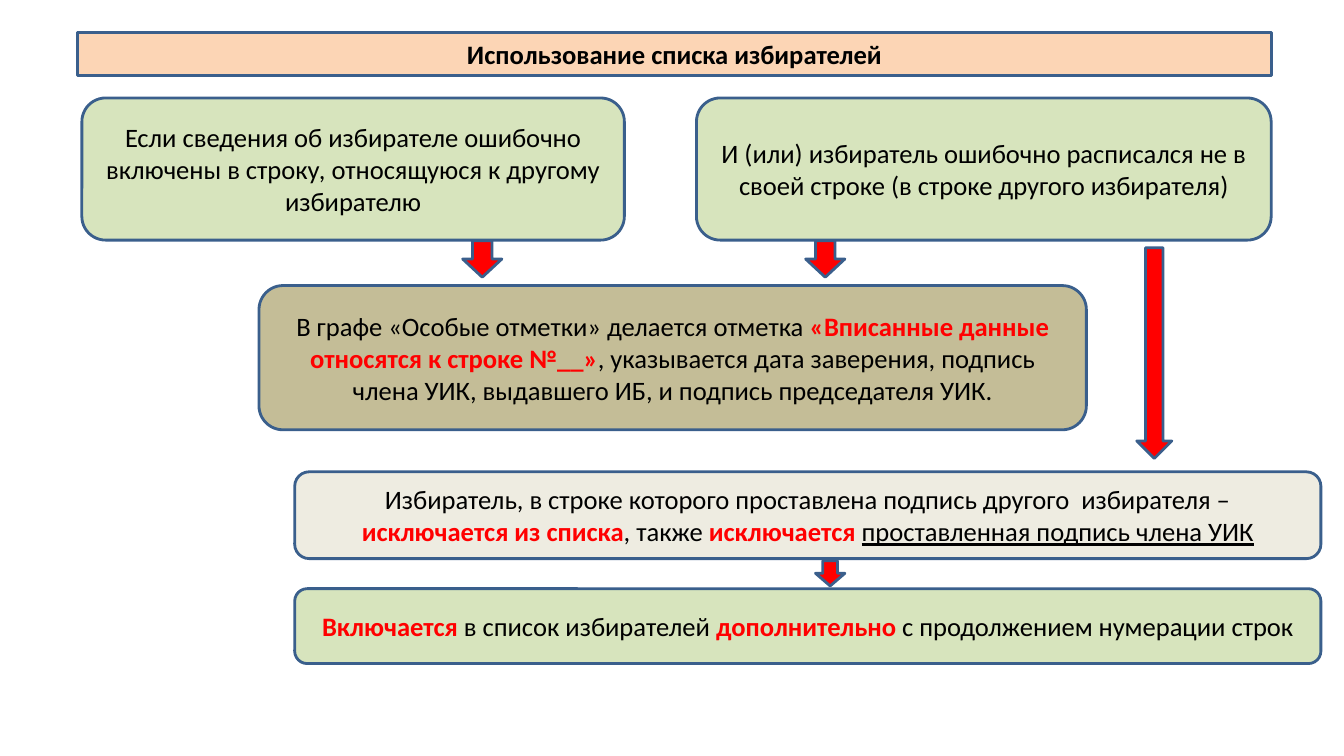
"""Build the slide on correcting mistakes in the voter list."""
from lxml.etree import SubElement
from pptx import Presentation
from pptx.dml.color import RGBColor
from pptx.enum.shapes import MSO_SHAPE as Shape
from pptx.enum.text import MSO_ANCHOR as Anchor, MSO_AUTO_SIZE as Fit, PP_ALIGN as Align
from pptx.oxml.ns import qn
from pptx.util import Pt

RED, BLACK, BLUE = "FF0000", "000000", "3A5F8C"
GREEN, PEACH, TAN, CREAM = "D7E4BD", "FCD5B5", "C4BD97", "EEECE1"


def color(code):
    return RGBColor.from_string(code)


def paint(shape, fill):
    shape.fill.solid()
    shape.fill.fore_color.rgb = color(fill)
    shape.line.color.rgb = color(BLUE)
    shape.line.width = Pt(2)


deck = Presentation()
deck.slide_width, deck.slide_height = Pt(960), Pt(540)
slide = deck.slides.add_slide(deck.slide_layouts[5])
shapes = slide.shapes

title = shapes.title
title.left, title.top, title.width, title.height = Pt(55.5), Pt(23), Pt(852.5), Pt(31)
SubElement(title.element.spPr, qn("a:prstGeom"), prst="roundRect")
paint(title, PEACH)

boxes = [
    (58.5, 70, 387.5, 101.5, GREEN, [
        ("Если сведения об избирателе ошибочно включены в строку, "
         "относящуюся к другому избирателю", "")]),
    (497.5, 70, 410.5, 101.5, GREEN, [
        ("И (или) избиратель ошибочно расписался не в своей строке "
         "(в строке другого избирателя)", "")]),
    (185, 204, 591, 103, TAN, [
        ("В графе «Особые отметки» делается отметка ", ""),
        ("«Вписанные данные относятся к строке №__»", "red"),
        (", указывается дата заверения, подпись члена УИК, выдавшего ИБ, "
         "и подпись председателя УИК.", "")]),
    (210.5, 337, 733, 62, CREAM, [
        ("Избиратель, в строке которого проставлена подпись другого  избирателя – ", ""),
        ("исключается из списка", "red"),
        (", также ", ""),
        ("исключается ", "red"),
        ("проставленная подпись члена УИК", "line")]),
    (210.5, 420.5, 733, 53.5, GREEN, [
        ("Включается", "red"),
        (" в список избирателей ", ""),
        ("дополнительно", "red"),
        (" с продолжением нумерации строк", "")]),
]
texts = [(title, [("Использование списка избирателей", "bold")])]
for left, top, width, height, fill, runs in boxes:
    box = shapes.add_shape(Shape.ROUNDED_RECTANGLE, Pt(left), Pt(top), Pt(width), Pt(height))
    box.shadow.inherit = False
    paint(box, fill)
    texts.append((box, runs))

for box, runs in texts:
    frame = box.text_frame
    frame.word_wrap = True
    frame.auto_size = Fit.NONE
    frame.vertical_anchor = Anchor.MIDDLE
    para = frame.paragraphs[0]
    para.alignment = Align.CENTER
    for words, style in runs:
        run = para.add_run()
        run.text = words
        font = run.font
        font.name, font.size = "Calibri", Pt(19)
        font.bold = style in ("red", "bold")
        font.underline = style == "line"
        font.color.rgb = color(RED if style == "red" else BLACK)

arrows = [
    (330.5, 172, 28, 26),
    (575.5, 172, 28, 26),
    (812, 177, 25, 150.5),
    (582.5, 400.5, 21, 18),
]
for left, top, width, height in arrows:
    arrow = shapes.add_shape(Shape.DOWN_ARROW, Pt(left), Pt(top), Pt(width), Pt(height))
    arrow.shadow.inherit = False
    paint(arrow, RED)

deck.save("out.pptx")
